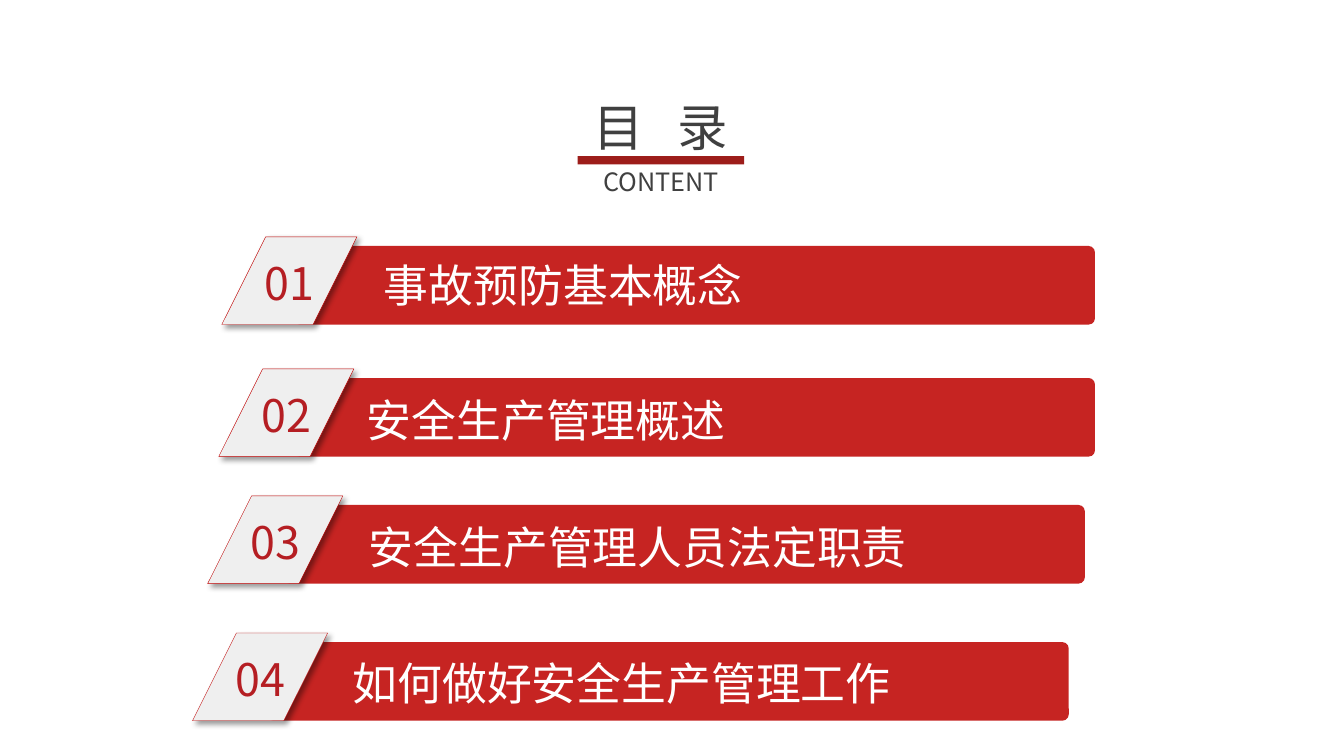
from dataclasses import dataclass

from lxml.etree import SubElement
from pptx import Presentation
from pptx.dml.color import RGBColor
from pptx.enum.shapes import MSO_SHAPE as Preset
from pptx.enum.text import MSO_ANCHOR as Anchor, MSO_AUTO_SIZE as AutoSize, PP_ALIGN as Align
from pptx.oxml.ns import qn
from pptx.util import Inches, Pt


@dataclass(frozen=True)
class Theme:
    font: str = "Noto Sans CJK SC"
    heading: str = "404040"
    rule: str = "9D1D1A"
    bar: str = "C62422"
    tile: str = "EFEFEF"
    tile_edge: str = "C00000"
    number: str = "B51E23"
    label: str = "FFFFFF"
    title_size: int = 36
    subtitle_size: int = 18
    entry_size: int = 32


@dataclass(frozen=True)
class Box:
    left: float
    top: float
    width: float
    height: float

    def inner(self, left, top, width, height):
        """Return a box whose corner is offset from this one's."""
        return Box(self.left + left, self.top + top, width, height)

    def lengths(self):
        return [Inches(n) for n in (self.left, self.top, self.width, self.height)]


THEME = Theme()
SLIDE_WIDTH, SLIDE_HEIGHT = 13.33, 7.5
ROW_HEIGHT, BAR_WIDTH, BAR_HEIGHT = 0.87, 7.95, 0.78

# left and top of the row, then offsets of the bar and the label
ENTRIES = [
    ("事故预防基本概念", 2.2, 2.35, 0.71, 1.51, 0.16),
    ("安全生产管理概述", 2.17, 3.66, 0.74, 1.37, 0.19),
    ("安全生产管理人员法定职责", 2.06, 4.92, 0.75, 1.5, 0.19),
    ("如何做好安全生产管理工作", 1.91, 6.28, 0.74, 1.49, 0.18),
]


def write(shape, text, size, color, align=Align.LEFT, anchor=Anchor.TOP):
    frame = shape.text_frame
    frame.auto_size = AutoSize.NONE
    frame.word_wrap = True
    frame.vertical_anchor = anchor
    paragraph = frame.paragraphs[0]
    paragraph.text = text
    paragraph.alignment = align
    font = paragraph.font
    font.size = Pt(size)
    font.name = THEME.font
    font.color.rgb = RGBColor.from_string(color)
    properties = paragraph._p.pPr.find(qn("a:defRPr"))
    SubElement(properties, qn("a:ea"), typeface=THEME.font)
    return paragraph


def add_text(slide, box, text, size, color, **options):
    write(slide.shapes.add_textbox(*box.lengths()), text, size, color, **options)


def add_filled(slide, preset, box, color):
    shape = slide.shapes.add_shape(preset, *box.lengths())
    shape.shadow.inherit = False
    shape.fill.solid()
    shape.fill.fore_color.rgb = RGBColor.from_string(color)
    shape.line.fill.background()
    return shape


def add_soft_shadow(shape):
    effects = shape._element.spPr.find(qn("a:effectLst"))
    shadow = SubElement(effects, qn("a:outerShdw"), blurRad=str(Pt(4)), dist=str(Pt(3)),
                        dir=str(45 * 60000), algn="tl", rotWithShape="0")
    color = SubElement(shadow, qn("a:srgbClr"), val="000000")
    SubElement(color, qn("a:alpha"), val="40000")


def add_heading(slide, box):
    title = slide.shapes.title
    title.left, title.top, title.width, title.height = box.inner(0, 0, box.width, 0.78).lengths()
    centred = {"align": Align.CENTER, "anchor": Anchor.MIDDLE}
    paragraph = write(title, "目 ", THEME.title_size, THEME.heading, **centred)
    paragraph.runs[0]._r.get_or_add_rPr().set("spc", "800")  # widens the gap between the characters
    paragraph.add_run().text = "录"
    add_filled(slide, Preset.RECTANGLE, box.inner(0.47, 0.69, 1.65, 0.08), THEME.rule)
    add_text(slide, box.inner(0, 0.71, box.width, 0.45), "CONTENT",
             THEME.subtitle_size, THEME.heading, **centred)


def add_entry(slide, box, number, label, bar_left, label_left, label_top):
    bar = add_filled(slide, Preset.ROUNDED_RECTANGLE,
                     box.inner(bar_left, box.height - BAR_HEIGHT, BAR_WIDTH, BAR_HEIGHT), THEME.bar)
    bar.adjustments[0] = 0.08
    add_text(slide, box.inner(label_left, label_top, 6.5, 0.64), label, THEME.entry_size, THEME.label)

    tile = add_filled(slide, Preset.PARALLELOGRAM, box.inner(0, 0, 1.34, box.height), THEME.tile)
    tile.adjustments[0] = 0.5
    tile.line.color.rgb = RGBColor.from_string(THEME.tile_edge)
    tile.line.width = Pt(0.25)
    add_soft_shadow(tile)
    add_text(slide, box.inner(0.33, 0.14, 0.87, 0.64), f"{number:02}", THEME.entry_size, THEME.number)


def add_contents_slide(presentation):
    slide = presentation.slides.add_slide(presentation.slide_layouts[5])
    add_heading(slide, Box(5.26, 0.86, 2.59, 1.16))
    for number, (label, left, top, *offsets) in enumerate(ENTRIES, start=1):
        row = Box(left, top, offsets[0] + BAR_WIDTH, ROW_HEIGHT)
        add_entry(slide, row, number, label, *offsets)


def main():
    presentation = Presentation()
    presentation.slide_width = Inches(SLIDE_WIDTH)
    presentation.slide_height = Inches(SLIDE_HEIGHT)
    add_contents_slide(presentation)
    presentation.save("out.pptx")


if __name__ == "__main__":
    main()
